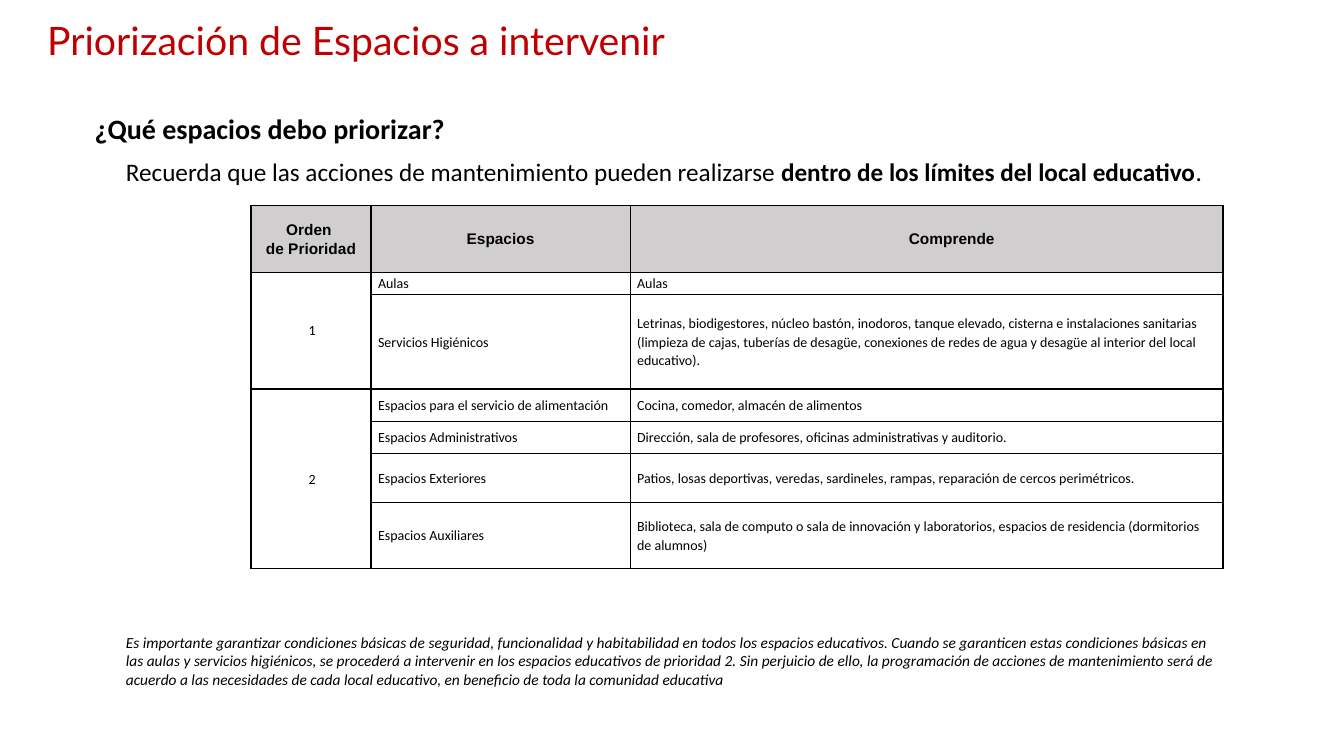
from lxml import etree
from pptx import Presentation
from pptx.dml.color import RGBColor
from pptx.enum.text import MSO_ANCHOR as Anchor, PP_ALIGN as Align
from pptx.oxml.ns import qn
from pptx.util import Inches, Pt

RED = RGBColor(0xC0, 0x00, 0x00)
BLACK = RGBColor(0x00, 0x00, 0x00)
HEADER_GRAY = RGBColor(0xD0, 0xCE, 0xCE)

COLUMN_WIDTHS = [1.19, 2.57, 5.88]
ROW_HEIGHTS = [0.66, 0.22, 0.94, 0.32, 0.32, 0.49, 0.65]
HEADERS = ["Orden \nde Prioridad", "Espacios", "Comprende"]
PRIORITIES = {
    "1": [
        ("Aulas", "Aulas"),
        ("Servicios Higiénicos",
         "Letrinas, biodigestores, núcleo bastón, inodoros, tanque elevado, cisterna e "
         "instalaciones sanitarias (limpieza de cajas, tuberías de desagüe, conexiones de "
         "redes de agua y desagüe al interior del local educativo)."),
    ],
    "2": [
        ("Espacios para el servicio de alimentación", "Cocina, comedor, almacén de alimentos"),
        ("Espacios Administrativos",
         "Dirección, sala de profesores, oficinas administrativas y auditorio."),
        ("Espacios Exteriores",
         "Patios, losas deportivas, veredas, sardineles, rampas, reparación de cercos "
         "perimétricos."),
        ("Espacios Auxiliares",
         "Biblioteca, sala de computo o sala de innovación y laboratorios, espacios de "
         "residencia (dormitorios de alumnos)"),
    ],
}
NOTE = (
    "Es importante garantizar condiciones básicas de seguridad, funcionalidad y habitabilidad "
    "en todos los espacios educativos. Cuando se garanticen estas condiciones básicas en las "
    "aulas y servicios higiénicos, se procederá a intervenir en los espacios educativos de "
    "prioridad 2. Sin perjuicio de ello, la programación de acciones de mantenimiento será de "
    "acuerdo a las necesidades de cada local educativo, en beneficio de toda la comunidad "
    "educativa"
)


def format_run(run, size, name="Calibri", color=BLACK, bold=False, italic=False):
    font = run.font
    font.size, font.name = Pt(size), name
    font.color.rgb = color
    font.bold, font.italic = bold, italic


def add_text(slide, box, pieces, size, anchor=Anchor.TOP, align=Align.LEFT,
             line_spacing=None, **style):
    shape = slide.shapes.add_textbox(*map(Inches, box))
    frame = shape.text_frame
    frame.word_wrap = True
    frame.vertical_anchor = anchor
    paragraph = frame.paragraphs[0]
    paragraph.alignment = align
    paragraph.line_spacing = line_spacing
    for text, bold in pieces:
        run = paragraph.add_run()
        run.text = text
        format_run(run, size, bold=bold, **style)


def add_borders(cell):
    properties = cell._tc.get_or_add_tcPr()
    for side in ("lnL", "lnR", "lnT", "lnB"):
        line = etree.SubElement(properties, qn(f"a:{side}"), w=str(Pt(1)))
        fill = etree.SubElement(line, qn("a:solidFill"))
        etree.SubElement(fill, qn("a:srgbClr"), val=str(BLACK))


def fill_cell(cell, text, header=False, indent=0):
    cell.text_frame.text = text
    cell.vertical_anchor = Anchor.MIDDLE
    cell.margin_left = cell.margin_right = Inches(0.07)
    cell.margin_top = cell.margin_bottom = 0
    for paragraph in cell.text_frame.paragraphs:
        paragraph.alignment = Align.CENTER if header else Align.LEFT
        paragraph.line_spacing = 1.07
        if indent:
            paragraph._p.get_or_add_pPr().set("marL", str(Inches(indent)))
        for run in paragraph.runs:
            if header:
                format_run(run, 11, "Arial", bold=True)
            else:
                format_run(run, 10)


def add_priority_table(slide, box):
    shape = slide.shapes.add_table(len(ROW_HEIGHTS), len(COLUMN_WIDTHS), *map(Inches, box))
    table = shape.table
    table.first_row = table.horz_banding = False
    for column, width in zip(table.columns, COLUMN_WIDTHS):
        column.width = Inches(width)
    for row, height in zip(table.rows, ROW_HEIGHTS):
        row.height = Inches(height)
    for index, cell in enumerate(table.iter_cells()):
        add_borders(cell)
        if index < len(HEADERS):
            cell.fill.solid()
            cell.fill.fore_color.rgb = HEADER_GRAY
        else:
            cell.fill.background()

    for column, header in enumerate(HEADERS):
        fill_cell(table.cell(0, column), header, True, 0.5 if header == "Comprende" else 0)
    first = 1
    for priority, spaces in PRIORITIES.items():
        last = first + len(spaces) - 1
        table.cell(first, 0).merge(table.cell(last, 0))
        fill_cell(table.cell(first, 0), priority, indent=0.5)
        for row, (space, contents) in enumerate(spaces, first):
            fill_cell(table.cell(row, 1), space)
            fill_cell(table.cell(row, 2), contents)
        first = last + 1


def main():
    presentation = Presentation()
    presentation.slide_width = Inches(13.33)
    presentation.slide_height = Inches(7.5)
    slide = presentation.slides.add_slide(presentation.slide_layouts[6])
    add_text(slide, (0.37, 0.15, 10, 0.53), [("Priorización de Espacios a intervenir", False)],
             28, Anchor.BOTTOM, line_spacing=0.9, name="Lato", color=RED)
    add_text(slide, (0.84, 1.06, 7.2, 0.44), [("¿Qué espacios debo priorizar?", True)],
             20, align=Align.JUSTIFY)
    add_priority_table(slide, (2.49, 2.04, sum(COLUMN_WIDTHS), sum(ROW_HEIGHTS)))
    add_text(slide, (1.15, 1.5, 11.22, 0.4),
             [("Recuerda que las acciones de mantenimiento pueden realizarse ", False),
              ("dentro de los límites del local educativo", True), (".", False)], 18)
    add_text(slide, (1.15, 6.23, 11.08, 0.66), [(NOTE, False)], 11, italic=True)
    presentation.save("out.pptx")


if __name__ == "__main__":
    main()
